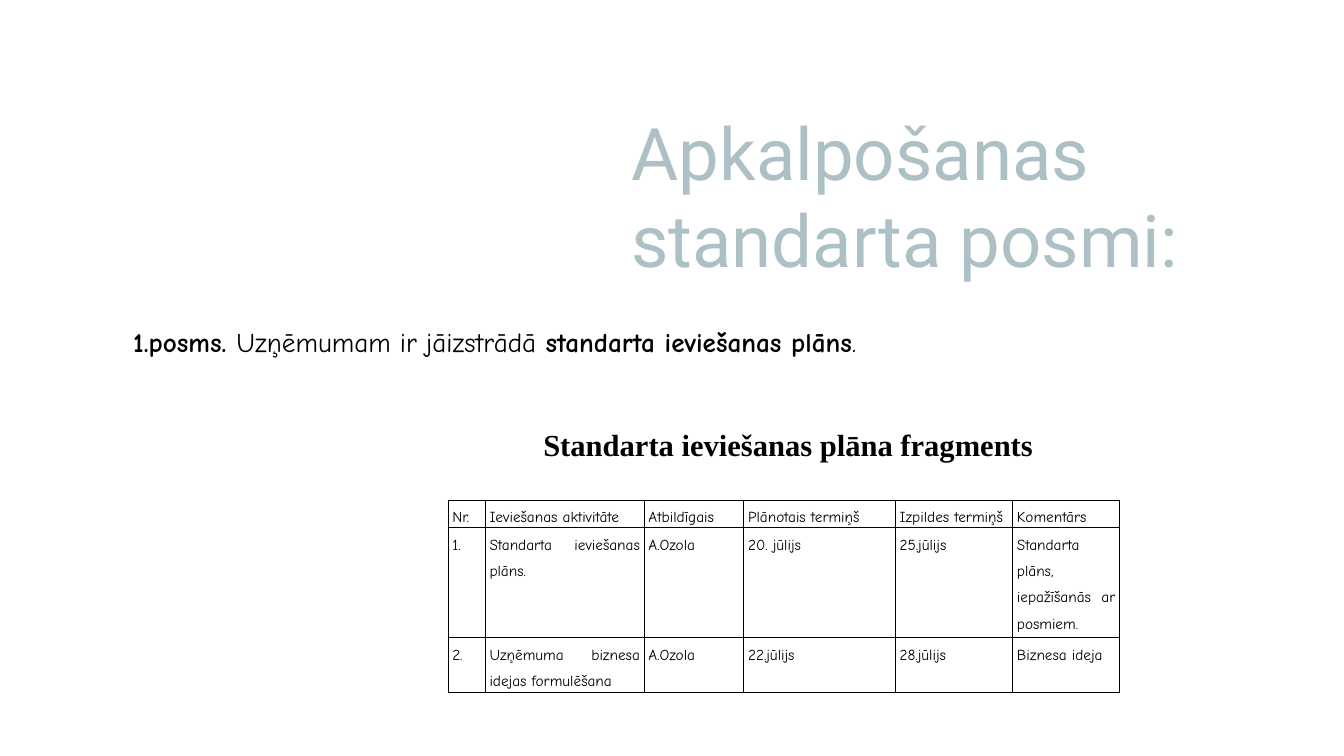
from lxml.etree import SubElement
from pptx import Presentation
from pptx.dml.color import RGBColor
from pptx.enum.text import PP_ALIGN
from pptx.oxml.ns import qn
from pptx.util import Inches, Pt

BLACK = RGBColor(0x00, 0x00, 0x00)
MIST = RGBColor(0xAC, 0xC0, 0xC6)
BODY_FONT = "Comic Neue"

SLIDE_SIZE = (21.99, 12.37)
TITLE = [("Apkalpošanas standarta posmi:", False)]
STAGE = [
    ("1.posms. ", True),
    ("Uzņēmumam ir jāizstrādā ", False),
    ("standarta ieviešanas plāns", True),
    (".", False),
]
PLAN_HEADING = [("Standarta ieviešanas plāna fragments", True)]
PLAN = [
    ("Nr.", "Ieviešanas aktivitāte", "Atbildīgais", "Plānotais termiņš",
     "Izpildes termiņš", "Komentārs"),
    ("1.", "Standarta ieviešanas plāns.", "A.Ozola", "20. jūlijs",
     "25.jūlijs", "Standarta plāns, iepažīšanās ar posmiem."),
    ("2.", "Uzņēmuma biznesa idejas formulēšana", "A.Ozola", "22.jūlijs",
     "28.jūlijs", "Biznesa ideja"),
]
COLUMN_WIDTHS = (0.61, 2.6, 1.63, 2.48, 1.92, 1.75)
ROW_LINES = (1, 4, 2)
LINE_HEIGHT = 0.45
PLAN_LEFT, PLAN_TOP = 7.33, 8.18


def add_text(slide, box, runs, font_name, size, color, wrap=False, inset=None):
    """Add one paragraph made of (text, bold) runs."""
    frame = slide.shapes.add_textbox(*map(Inches, box)).text_frame
    frame.word_wrap = wrap
    if inset is not None:
        frame.margin_left = frame.margin_right = Inches(inset)
        frame.margin_top = frame.margin_bottom = Inches(inset)
    paragraph = frame.paragraphs[0]
    set_font(paragraph.font, font_name, size, color)
    for text, bold in runs:
        run = paragraph.add_run()
        run.text = text
        run.font.bold = bold


def set_font(font, name, size, color):
    font.name = name
    font.size = Pt(size)
    font.color.rgb = color


def add_borders(cell):
    properties = cell._tc.get_or_add_tcPr()
    for position, side in enumerate(("a:lnL", "a:lnR", "a:lnT", "a:lnB")):
        line = SubElement(properties, qn(side), w=str(Pt(1)))
        fill = SubElement(line, qn("a:solidFill"))
        SubElement(fill, qn("a:srgbClr"), val=str(BLACK))
        properties.insert(position, line)


def fill_cell(cell, text):
    cell.margin_left = cell.margin_right = Inches(0.07)
    cell.margin_top = cell.margin_bottom = 0
    cell.fill.background()
    add_borders(cell)
    cell.text = text
    paragraph = cell.text_frame.paragraphs[0]
    paragraph.alignment = PP_ALIGN.JUSTIFY
    paragraph.line_spacing = 1.5
    paragraph.space_before = paragraph.space_after = Pt(2)
    set_font(paragraph.font, BODY_FONT, 18, BLACK)
    paragraph.font.bold = False


def add_plan(slide):
    table = slide.shapes.add_table(
        len(PLAN), len(COLUMN_WIDTHS), Inches(PLAN_LEFT), Inches(PLAN_TOP),
        Inches(sum(COLUMN_WIDTHS)), Inches(sum(ROW_LINES) * LINE_HEIGHT),
    ).table
    table.first_row = table.horz_banding = False
    for column, width in zip(table.columns, COLUMN_WIDTHS):
        column.width = Inches(width)
    for row, lines, texts in zip(table.rows, ROW_LINES, PLAN):
        row.height = Inches(lines * LINE_HEIGHT)
        for cell, text in zip(row.cells, texts):
            fill_cell(cell, text)


def main():
    presentation = Presentation()
    presentation.slide_width, presentation.slide_height = map(Inches, SLIDE_SIZE)
    slide = presentation.slides.add_slide(presentation.slide_layouts[6])
    add_text(slide, (10.33, 1.77, 10.67, 2.88), TITLE, "Roboto", 85.5, MIST,
             wrap=True, inset=0)
    add_text(slide, (2.08, 5.27, 13.42, 0.64), STAGE, BODY_FONT, 32, BLACK)
    add_plan(slide)
    add_text(slide, (8.79, 6.92, 8.42, 0.71), PLAN_HEADING, "Times New Roman",
             36, BLACK)
    presentation.save("out.pptx")


if __name__ == "__main__":
    main()
